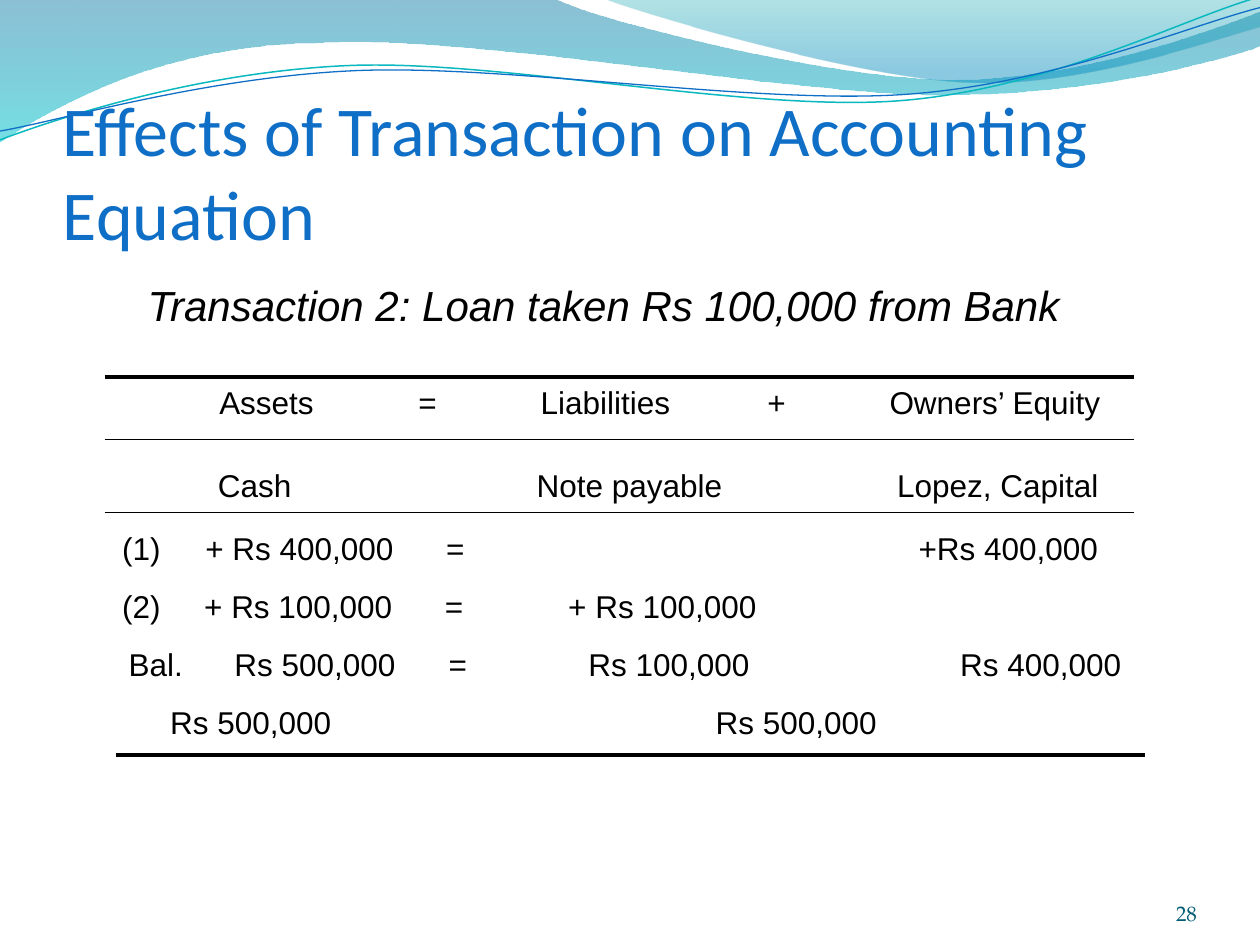
"""Build the slide on how a loan changes the accounting equation."""
from math import cos, radians, sin

from lxml.etree import SubElement
from pptx import Presentation
from pptx.dml.color import RGBColor
from pptx.enum.shapes import MSO_CONNECTOR
from pptx.enum.text import MSO_ANCHOR, PP_ALIGN
from pptx.oxml.ns import qn
from pptx.util import Inches, Pt

BLACK = RGBColor(0x00, 0x00, 0x00)
BLUE = RGBColor(0x0F, 0x6F, 0xC6)
AQUA = RGBColor(0x0A, 0xB8, 0xBF)
TEAL = RGBColor(0x04, 0x5D, 0x75)
DEEP = RGBColor(0x00, 0x74, 0xA1)
CYAN = RGBColor(0x00, 0xC6, 0xCF)
GREEN = RGBColor(0x00, 0xA1, 0xA9)
SKY = RGBColor(0x00, 0x8B, 0xBF)

prs = Presentation()
prs.slide_width, prs.slide_height = Inches(10), Inches(7.5)
s = prs.slides.add_slide(prs.slide_layouts[6])


def add_wave(start, segments, closed):
    fb = s.shapes.build_freeform(Inches(start[0]), Inches(start[1]))
    fb.add_line_segments([(Inches(x), Inches(y)) for seg in segments for x, y in seg],
                         close=closed)
    sp = fb.convert_to_shape()
    sp.shadow.inherit = False
    lines = iter(list(sp._element.iter(qn("a:lnTo"))))
    for seg in segments:
        steps = [next(lines) for _ in seg]
        if len(seg) == 3:
            curve = steps[0].makeelement(qn("a:cubicBezTo"))
            steps[0].addprevious(curve)
            for step in steps:
                curve.append(step[0])
                step.getparent().remove(step)
    return sp


def add_text(text, box, size, font, color, align=PP_ALIGN.LEFT, anchor=MSO_ANCHOR.TOP):
    tf = s.shapes.add_textbox(*[Inches(v) for v in box]).text_frame
    tf.word_wrap = True
    tf.vertical_anchor = anchor
    tf.margin_left = tf.margin_right = 0
    p = tf.paragraphs[0]
    p.text, p.alignment = text, align
    r = p.runs[0]
    r.font.size, r.font.name, r.font.color.rgb = Pt(size), font, color
    return tf


bands = [
    ((0, -0.01), [
        [(4.4, -0.01)],
        [(4.76, 0.17), (6.64, 0.63), (7.58, 0.63)],
        [(8.53, 0.63), (9.58, 0.26), (10, 0.09)],
        [(10.01, 0.36)],
        [(9.83, 0.44), (8.7, 0.76), (7.46, 0.75)],
        [(6.22, 0.75), (3.82, 0.28), (2.57, 0.34)],
        [(1.29, 0.35), (0.46, 0.83), (-0.01, 1.13)],
        [(0, -0.01)],
    ], [(0, DEEP, 45), (1, CYAN, 55)]),
    ((4.79, -0.01), [
        [(5.09, 0.11), (6.82, 0.62), (7.69, 0.65)],
        [(8.56, 0.69), (9.61, 0.32), (10, 0.21)],
        [(10, 0)],
        [(4.79, -0.01)],
    ], [(0, GREEN, 30), (0.8, SKY, 45)]),
]
for start, segments, stops in bands:
    sp = add_wave(start, segments, True)
    sp.line.fill.background()
    sp.fill.gradient()
    sp.fill.gradient_angle = 270
    for stop, (position, color, _) in zip(sp.fill.gradient_stops, stops):
        stop.position, stop.color.rgb = position, color
    for clr, (_, _, opacity) in zip(sp._element.spPr.iter(qn("a:srgbClr")), stops):
        SubElement(clr, qn("a:alpha"), val=str(opacity * 1000))

TILT = 2.7
CX, COS, SIN = 4.99, cos(radians(TILT)), sin(radians(TILT))
strands = [
    ((0, 1.11), [
        [(0.48, 0.93), (1.58, 0.57), (2.77, 0.52)],
        [(3.95, 0.47), (5.93, 0.89), (7.13, 0.8)],
        [(8.33, 0.71), (9.38, 0.15), (9.98, -0.02)],
    ], AQUA, 0.85, 0.575),
    ((0, 1.04), [
        [(0.47, 0.96), (1.64, 0.61), (2.83, 0.56)],
        [(4.03, 0.51), (5.97, 0.83), (7.17, 0.75)],
        [(8.36, 0.67), (9.41, 0.21), (10, 0.06)],
    ], BLUE, 0.75, 0.59),
]
for start, segments, color, width, cy in strands:
    (level_start,), *level = [
        [(CX + (x - CX) * COS - (y - cy) * SIN, cy + (x - CX) * SIN + (y - cy) * COS)
         for x, y in seg] for seg in [[start], *segments]]
    sp = add_wave(level_start, level, False)
    sp.rotation = -TILT
    sp.fill.background()
    sp.line.color.rgb, sp.line.width = color, Pt(width)

tf = add_text("Effects of Transaction on Accounting Equation", (0.5, 0.77, 9, 1.25),
              40, "Calibri", BLUE, anchor=MSO_ANCHOR.BOTTOM)
tf.margin_bottom = 0
tf = add_text("28", (8.67, 6.95, 0.83, 0.4), 12, "TeX Gyre Pagella", TEAL,
              PP_ALIGN.RIGHT, MSO_ANCHOR.BOTTOM)
tf.margin_top = tf.margin_bottom = 0
tf = add_text("Transaction 2: Loan taken Rs 100,000 from Bank", (0.75, 2.17, 8.08, 0.5),
              24, "Arial", BLACK, PP_ALIGN.CENTER)
tf.paragraphs[0].runs[0].font.italic = True

BODY, PITCH = 4.15, 0.46
rows = [
    (0.75, 2.99, 8.12, [(1.74, "Assets"), (3.32, "="), (4.29, "Liabilities"),
                        (6.09, "+"), (7.06, "Owners’ Equity")]),
    (0.67, 3.65, 8.16, [(1.73, "Cash"), (4.26, "Note payable"), (7.12, "Lopez, Capital")]),
    (0.67, BODY, 8.15, [(0.97, "(1)"), (1.63, "+ Rs 400,000"), (3.54, "="),
                        (7.29, "+Rs 400,000")]),
    (0.73, BODY + PITCH, 5.38, [(0.97, "(2)"), (1.62, "+ Rs 100,000"), (3.53, "="),
                                (4.51, "+ Rs 100,000")]),
    (0.92, BODY + 2 * PITCH, 8.08, [(1.02, "Bal."), (1.86, "Rs 500,000"), (3.56, "="),
                                    (4.67, "Rs 100,000"), (7.62, "Rs 400,000")]),
    (1.11, BODY + 3 * PITCH, 5.95, [(1.35, "Rs 500,000"), (5.68, "Rs 500,000")]),
]
for left, top, width, cells in rows:
    text = "".join("\t" + label for _, label in cells)
    tf = add_text(text, (left, top, width, 0.4), 18, "Arial", BLACK)
    tabs = SubElement(tf.paragraphs[0]._p.get_or_add_pPr(), qn("a:tabLst"))
    for x, _ in cells:
        SubElement(tabs, qn("a:tab"), pos=str(Inches(x - left)), algn="l")

for left, y, weight in [(0.83, 2.99, 2.25), (0.83, 3.49, 0.75),
                        (0.83, 4.07, 0.75), (0.92, 5.99, 2.25)]:
    cx = s.shapes.add_connector(MSO_CONNECTOR.STRAIGHT, Inches(left), Inches(y),
                                Inches(left + 8.17), Inches(y))
    cx.line.color.rgb, cx.line.width = BLACK, Pt(weight)
    SubElement(cx._element.spPr, qn("a:effectLst"))

prs.save("out.pptx")
